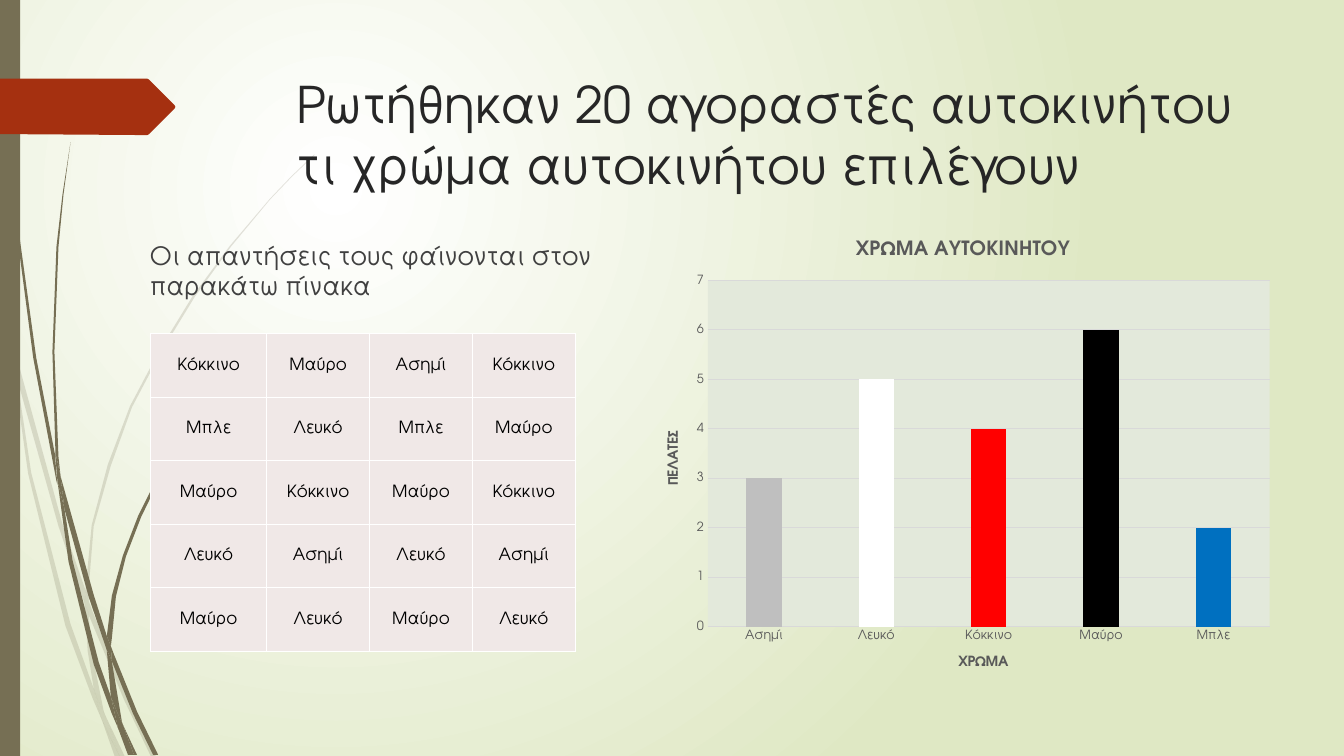
from lxml import etree
from pptx import Presentation
from pptx import util as u
from pptx.chart import data as chart_data
from pptx.dml.color import RGBColor
from pptx.enum import chart as chart_enum
from pptx.enum import shapes, text
from pptx.oxml import ns, parse_xml

FONT = "TeX Gyre Adventor"
WHITE = RGBColor(0xFF, 0xFF, 0xFF)
BLACK = RGBColor(0, 0, 0)
PALE_GREEN = RGBColor(0xDF, 0xE8, 0xC4)
OLIVE = RGBColor(0x76, 0x6F, 0x54)
RUST = RGBColor(0xA5, 0x30, 0x10)
TITLE_INK = RGBColor(0x26, 0x26, 0x26)
BODY_INK = RGBColor(0x40, 0x40, 0x40)
CHART_INK = RGBColor(0x59, 0x59, 0x59)
GRID = RGBColor(0xD9, 0xD9, 0xD9)
PLOT = RGBColor(0xE3, 0xE9, 0xDB)
CELL = RGBColor(0xF0, 0xE8, 0xE7)
SILVER = RGBColor(0xBF, 0xBF, 0xBF)
RED = RGBColor(0xFF, 0, 0)
BLUE = RGBColor(0, 0x70, 0xC0)

UNIT = u.Pt(0.72)
FAINT_BLADES = [
    [(11, 350), (9, 322), (0, 282), (0, 299), (10, 344)],
    [(58, 522), (84, 599), (85, 586), (62, 520), (14, 345), (17, 376)],
    [(92, 607), (88, 596), (88, 610), (123, 694), (150, 751), (155, 751), (127, 692)],
    [(119, 751), (124, 751), (105, 711)],
    [(93, 683), (70, 619), (31, 469), (17, 376), (11, 350), (28, 470), (65, 621),
     (92, 693), (101, 714), (99, 707)],
    [(84, 599), (87, 646), (93, 683), (96, 692), (105, 711), (103, 706), (91, 646),
     (88, 610), (88, 608)],
    [(88, 584), (93, 522), (110, 462), (131, 404), (160, 349), (193, 295), (229, 245),
     (268, 198), (290, 175), (312, 154), (312, 153), (289, 175), (268, 197), (228, 244),
     (191, 294), (158, 348), (129, 403), (107, 461), (91, 521), (85, 584), (85, 586),
     (88, 596)],
    [(101, 714), (114, 751), (119, 751)],
    [(88, 608), (88, 610), (88, 596), (85, 586), (84, 599)],
    [(96, 692), (93, 683), (99, 707), (101, 714), (119, 751), (105, 711)],
]
SOLID_BLADES = [
    [(7, 110), (17, 233), (33, 355), (56, 477), (57, 481), (55, 457), (55, 453),
     (36, 355), (19, 232), (8, 109), (5, 48), (4, 0), (3, 0), (4, 48)],
    [(88, 592), (106, 645), (106, 633), (106, 631), (93, 590), (60, 472), (64, 505)],
    [(113, 649), (110, 641), (111, 656), (132, 708), (152, 749), (157, 749), (136, 706)],
    [(110, 691), (98, 657), (72, 556), (64, 505), (57, 477), (68, 557), (93, 659),
     (111, 708), (117, 722), (116, 717)],
    [(60, 472), (58, 453), (54, 349), (58, 245), (63, 193), (70, 141), (62, 193),
     (56, 245), (52, 349), (55, 449), (60, 472)],
    [(133, 749), (136, 749), (122, 719)],
    [(57, 477), (64, 505), (60, 472), (55, 449), (55, 453)],
    [(111, 633), (115, 592), (125, 552), (140, 513), (158, 476), (180, 440), (205, 406),
     (231, 374), (245, 359), (261, 344), (260, 344), (245, 358), (231, 373), (204, 405),
     (178, 439), (156, 474), (137, 512), (122, 551), (111, 591), (106, 631), (110, 641)],
    [(117, 722), (127, 749), (131, 749)],
    [(106, 645), (110, 691), (116, 706), (122, 719), (121, 716), (111, 656), (109, 651)],
    [(106, 645), (109, 651), (111, 656), (110, 641), (106, 631), (106, 633)],
    [(116, 706), (110, 691), (116, 717), (117, 722), (130, 749), (133, 749), (122, 719)],
]
ARROW = [(0, 0), (146, 0), (148, 1), (173, 26), (174, 28), (173, 30), (148, 55),
         (146, 56), (0, 55)]
ANSWERS = [
    ["Κόκκινο", "Μαύρο", "Ασημί", "Κόκκινο"],
    ["Μπλε", "Λευκό", "Μπλε", "Μαύρο"],
    ["Μαύρο", "Κόκκινο", "Μαύρο", "Κόκκινο"],
    ["Λευκό", "Ασημί", "Λευκό", "Ασημί"],
    ["Μαύρο", "Λευκό", "Μαύρο", "Λευκό"],
]
VOTES = [("Ασημί", 3, SILVER), ("Λευκό", 5, WHITE), ("Κόκκινο", 4, RED),
         ("Μαύρο", 6, BLACK), ("Μπλε", 2, BLUE)]


def style_font(font, size, color, bold=False):
    font.name, font.size, font.color.rgb, font.bold = FONT, u.Pt(size), color, bold


def add_span(para, words, size, color, bold=False):
    span = para.add_run()
    span.text = words
    style_font(span.font, size, color, bold)


def paint(shape, color):
    shape.shadow.inherit = False
    shape.fill.solid()
    shape.fill.fore_color.rgb = color
    shape.line.fill.background()


def add_outline(page, points, left, top, color, opacity=100):
    builder = page.shapes.build_freeform(*points[0], scale=UNIT)
    builder.add_line_segments(points[1:], close=True)
    shape = builder.convert_to_shape(u.Pt(left), u.Pt(top))
    paint(shape, color)
    if opacity < 100:
        tint = shape.fill._xPr.find(".//" + ns.qn("a:srgbClr"))
        etree.SubElement(tint, ns.qn("a:alpha"), val=str(opacity * 1000))


def add_background(page):
    fill = page.background.fill
    fill.gradient()
    for stop, color in zip(fill.gradient_stops, (WHITE, PALE_GREEN)):
        stop.color.rgb = color
    gradient = page._element.find(".//" + ns.qn("a:gradFill"))
    gradient.remove(gradient.find(ns.qn("a:lin")))
    circle = etree.SubElement(gradient, ns.qn("a:path"), path="circle")
    etree.SubElement(circle, ns.qn("a:fillToRect"),
                     l="50000", t="50000", r="100000", b="100000")


def add_decoration(page, left, top, height):
    for blades, opacity in ((FAINT_BLADES, 20), (SOLID_BLADES, 100)):
        for blade in blades:
            add_outline(page, blade, left, top, OLIVE, opacity)
    strip = page.shapes.add_shape(shapes.MSO_SHAPE.RECTANGLE, u.Pt(left), u.Pt(top),
                                  u.Pt(14.4), u.Pt(height))
    paint(strip, OLIVE)
    add_outline(page, ARROW, left, top + 56.2, RUST)


def add_text(page, left, top, width, height, words, size, color, before=0):
    box = page.shapes.add_textbox(u.Pt(left), u.Pt(top), u.Pt(width), u.Pt(height))
    frame = box.text_frame
    frame.word_wrap = True
    para = frame.paragraphs[0]
    para.space_before = u.Pt(before)
    add_span(para, words, size, color)


def add_cell_borders(cell):
    properties = cell._tc.get_or_add_tcPr()
    for index, side in enumerate(("lnL", "lnR", "lnT", "lnB")):
        properties.insert(index, parse_xml(
            f'<a:{side} {ns.nsdecls("a")} w="12700"><a:solidFill>'
            f'<a:srgbClr val="{WHITE}"/></a:solidFill></a:{side}>'))


def add_answers(page, left, top, width, height):
    rows, columns = len(ANSWERS), len(ANSWERS[0])
    table = page.shapes.add_table(rows, columns, u.Pt(left), u.Pt(top),
                                  u.Pt(width), u.Pt(height)).table
    table.first_row = table.horz_banding = False
    first = 83
    for index, column in enumerate(table.columns):
        column.width = u.Pt((width - first) / (columns - 1) if index else first)
    for row, answers in zip(table.rows, ANSWERS):
        row.height = u.Pt(height / rows)
        for cell, answer in zip(row.cells, answers):
            cell.fill.solid()
            cell.fill.fore_color.rgb = CELL
            cell.margin_left = cell.margin_right = cell.margin_top = cell.margin_bottom = 0
            cell.vertical_anchor = text.MSO_ANCHOR.MIDDLE
            para = cell.text_frame.paragraphs[0]
            para.alignment = text.PP_ALIGN.CENTER
            add_span(para, answer, 12, BLACK)
            add_cell_borders(cell)


def shape_plot_area(chart):
    area = chart._chartSpace.chart.plotArea
    for layout in area.findall(ns.qn("c:layout")):
        area.remove(layout)
    layout = etree.Element(ns.qn("c:layout"))
    manual = etree.SubElement(layout, ns.qn("c:manualLayout"))
    for tag, value in (("layoutTarget", "inner"), ("xMode", "edge"), ("yMode", "edge"),
                       ("x", "0.1"), ("y", "0.13"), ("w", "0.88"), ("h", "0.74")):
        etree.SubElement(manual, ns.qn("c:" + tag), val=value)
    area.insert(0, layout)
    area.append(parse_xml(
        f'<c:spPr {ns.nsdecls("c", "a")}><a:solidFill><a:srgbClr val="{PLOT}"/>'
        '</a:solidFill></c:spPr>'))


def add_votes(page, left, top, width, height):
    data = chart_data.CategoryChartData()
    data.categories = [name for name, _, _ in VOTES]
    data.add_series("Series 1", [count for _, count, _ in VOTES])
    chart = page.shapes.add_chart(
        chart_enum.XL_CHART_TYPE.COLUMN_CLUSTERED, u.Pt(left), u.Pt(top),
        u.Pt(width), u.Pt(height), data).chart
    style_font(chart.font, 10, BLACK)
    chart.has_legend = False
    colors, counts = chart.category_axis, chart.value_axis
    for owner, words, size in ((chart, "ΧΡΩΜΑ ΑΥΤΟΚΙΝΗΤΟΥ", 14),
                               (colors, "ΧΡΩΜΑ", 10), (counts, "ΠΕΛΑΤΕΣ", 10)):
        title = owner.chart_title if owner is chart else owner.axis_title
        add_span(title.text_frame.paragraphs[0], words, size, CHART_INK, True)
    for axis in (colors, counts):
        axis.major_tick_mark = axis.minor_tick_mark = chart_enum.XL_TICK_MARK.NONE
        style_font(axis.tick_labels.font, 9, CHART_INK)
    counts.minimum_scale, counts.maximum_scale, counts.major_unit = 0, 7, 1
    counts.format.line.fill.background()
    for line in (colors.format.line, counts.major_gridlines.format.line):
        line.color.rgb = GRID
        line.width = u.Pt(0.75)
    plot = chart.plots[0]
    plot.gap_width, plot.overlap, plot.vary_by_categories = 219, -27, False
    for index, (_, _, color) in enumerate(VOTES):
        fill = plot.series[0].points[index].format.fill
        fill.solid()
        fill.fore_color.rgb = color
    shape_plot_area(chart)


def main():
    deck = Presentation()
    deck.slide_width, deck.slide_height = u.Pt(960), u.Pt(540)
    page = deck.slides.add_slide(deck.slide_layouts[6])
    add_background(page)
    add_decoration(page, 0, 0, 540)
    add_text(page, 204.5, 49, 702, 101,
             "Ρωτήθηκαν 20 αγοραστές αυτοκινήτου τι χρώμα αυτοκινήτου επιλέγουν",
             36, TITLE_INK)
    add_text(page, 100, 168, 380, 297,
             "Οι απαντήσεις τους φαίνονται στον παρακάτω πίνακα", 18, BODY_INK, 10)
    add_votes(page, 460, 157, 456, 334)
    add_answers(page, 107.5, 238.3, 303.5, 227)
    deck.save("out.pptx")


if __name__ == "__main__":
    main()
